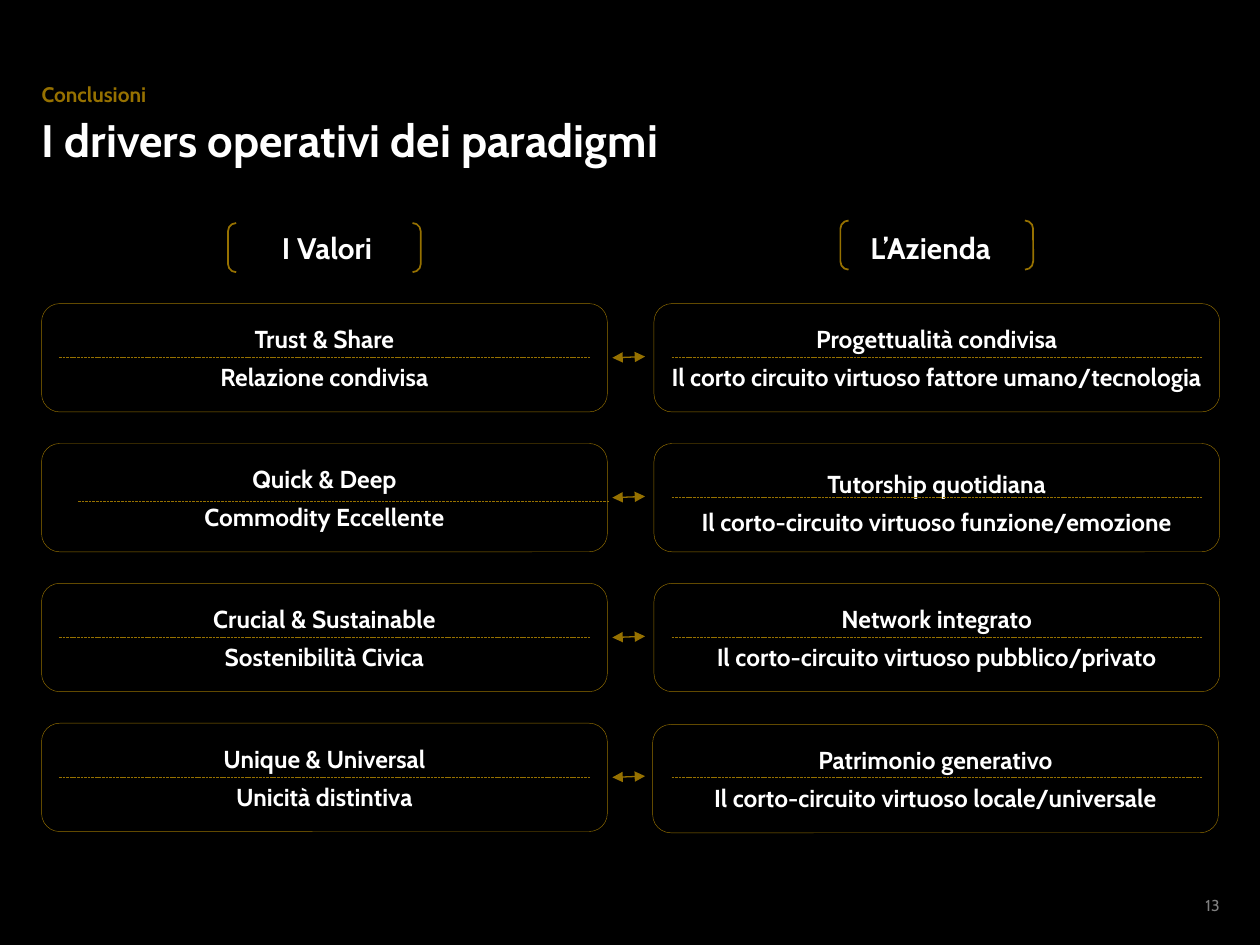
import pptx
import pptx.util
import pptx.dml.color
import pptx.enum.dml
import pptx.enum.shapes
import pptx.enum.text
import pptx.oxml
import pptx.oxml.ns

TITLE = "I drivers operativi dei paradigmi"
SECTION = "Conclusioni"
PAGE = "13"
HEADINGS = [
    {"label": "I Valori", "label_left": 0.35, "bracket": (1.81, 1.77)},
    {"label": "L’Azienda", "label_left": 5.14, "bracket": (6.67, 1.75)},
]
DRIVERS = [
    [("Trust & Share", "Relazione condivisa"),
     ("Progettualità condivisa", "Il corto circuito virtuoso fattore umano/tecnologia")],
    [("Quick & Deep", "Commodity Eccellente"),
     ("Tutorship quotidiana", "Il corto-circuito virtuoso funzione/emozione")],
    [("Crucial & Sustainable", "Sostenibilità Civica"),
     ("Network integrato", "Il corto-circuito virtuoso pubblico/privato")],
    [("Unique & Universal", "Unicità distintiva"),
     ("Patrimonio generativo", "Il corto-circuito virtuoso locale/universale")],
]
CARD_SHIFT = {(3, 1): (-0.01, 0.01)}
TEXT_DROP = {(1, 1): 0.08}
RULE_SHIFT = {(1, 0): (0.15, 0.03)}

FONT, GOLD, WHITE, GREY, BLACK = "Cabin", "967100", "FFFFFF", "7F7F7F", "000000"
COLUMNS = (0.33, 5.19)
CARD_W, CARD_H = 4.49, 0.86
FIRST_ROW, ROW_PITCH = 2.41, 1.11
RULE_INSET = 0.14
ARROW_FROM, ARROW_TO = 4.86, 5.12
LEFT = pptx.enum.text.PP_ALIGN.LEFT
CENTER = pptx.enum.text.PP_ALIGN.CENTER
RIGHT = pptx.enum.text.PP_ALIGN.RIGHT
TOP = pptx.enum.text.MSO_ANCHOR.TOP
MIDDLE = pptx.enum.text.MSO_ANCHOR.MIDDLE
SHAPES = pptx.enum.shapes.MSO_SHAPE


def inches(*lengths):
    return [pptx.util.Inches(length) for length in lengths]


def rgb(color):
    return pptx.dml.color.RGBColor.from_string(color)


def write(shape, texts, size, color=WHITE, align=CENTER, anchor=MIDDLE,
          margins=(0, 0, 0, 0), bold=True, gap=0):
    frame = shape.text_frame
    frame.word_wrap = True
    frame.auto_size = pptx.enum.text.MSO_AUTO_SIZE.NONE
    frame.vertical_anchor = anchor
    (frame.margin_left, frame.margin_top,
     frame.margin_right, frame.margin_bottom) = inches(*margins)
    frame.text = "\n".join(texts)
    for index, paragraph in enumerate(frame.paragraphs):
        paragraph.alignment = align
        paragraph.space_before = pptx.util.Pt(gap if index else 0)
        paragraph.font.name = FONT
        paragraph.font.size = pptx.util.Pt(size)
        paragraph.font.bold = bold
        paragraph.font.color.rgb = rgb(color)


def add_text(slide, box, text, size, **style):
    write(slide.shapes.add_textbox(*inches(*box)), [text], size, **style)


def add_outline(slide, preset, box, weight):
    outline = slide.shapes.add_shape(preset, *inches(*box))
    outline.shadow.inherit = False
    outline.fill.background()
    outline.line.color.rgb = rgb(GOLD)
    outline.line.width = pptx.util.Pt(weight)
    return outline


def add_line(slide, ends, weight):
    line = slide.shapes.add_connector(
        pptx.enum.shapes.MSO_CONNECTOR.STRAIGHT, *inches(*ends))
    line.line.color.rgb = rgb(GOLD)
    line.line.width = pptx.util.Pt(weight)
    pptx.oxml.ns.qn("a:effectLst")
    line._element.spPr.append(pptx.oxml.parse_xml(
        f"<a:effectLst {pptx.oxml.ns.nsdecls('a')}/>"))
    return line


def add_driver(slide, row, column, texts):
    cell = row, column
    left, top = COLUMNS[column], FIRST_ROW + row * ROW_PITCH
    dx, dy = CARD_SHIFT.get(cell, (0, 0))
    card = add_outline(slide, SHAPES.ROUNDED_RECTANGLE,
                       (left + dx, top + dy, CARD_W, CARD_H), 0.25)
    drop = TEXT_DROP.get(cell, 0)
    write(card, texts, 14, margins=(0, 0.02 + drop, 0, 0.02), gap=5)
    dx, dy = RULE_SHIFT.get(cell, (0, 0))
    middle = top + CARD_H / 2 + dy
    rule = add_line(slide, (left + RULE_INSET + dx, middle,
                            left + CARD_W - RULE_INSET + dx, middle), 0.5)
    rule.line.dash_style = pptx.enum.dml.MSO_LINE.SQUARE_DOT


def add_arrow(slide, row):
    middle = FIRST_ROW + row * ROW_PITCH + CARD_H / 2
    arrow = add_line(slide, (ARROW_FROM, middle, ARROW_TO, middle - 0.01), 0.75)
    for end in ("headEnd", "tailEnd"):
        arrow.line._get_or_add_ln().append(pptx.oxml.parse_xml(
            f'<a:{end} {pptx.oxml.ns.nsdecls("a")} type="triangle"/>'))


def main():
    """Build the slide that pairs the values with the company's drivers."""
    deck = pptx.Presentation()
    deck.slide_width, deck.slide_height = inches(10, 7.5)
    slide = deck.slides.add_slide(deck.slide_layouts[5])
    slide.background.fill.solid()
    slide.background.fill.fore_color.rgb = rgb(BLACK)

    title = slide.shapes.title
    title.left, title.top, title.width, title.height = inches(0.33, 0.89, 8.33, 0.56)
    write(title, [TITLE], 26, align=LEFT, anchor=TOP)
    add_text(slide, (0.33, 0.61, 1.39, 0.29), SECTION, 12, color=GOLD,
             align=LEFT, anchor=TOP, margins=(0, 0.04, 0.09, 0.04))
    add_text(slide, (8.34, 7.1, 1.34, 0.17), PAGE, 9, color=GREY,
             align=RIGHT, bold=False)

    for heading in HEADINGS:
        add_text(slide, (heading["label_left"], 1.77, CARD_W, 0.39),
                 heading["label"], 17, margins=(0.09, 0.04, 0.09, 0.04))
        add_outline(slide, SHAPES.DOUBLE_BRACKET, (*heading["bracket"], 1.53, 0.39), 1)

    for row, pair in enumerate(DRIVERS):
        for column, texts in enumerate(pair):
            add_driver(slide, row, column, texts)
        add_arrow(slide, row)
    deck.save("out.pptx")


if __name__ == "__main__":
    main()
